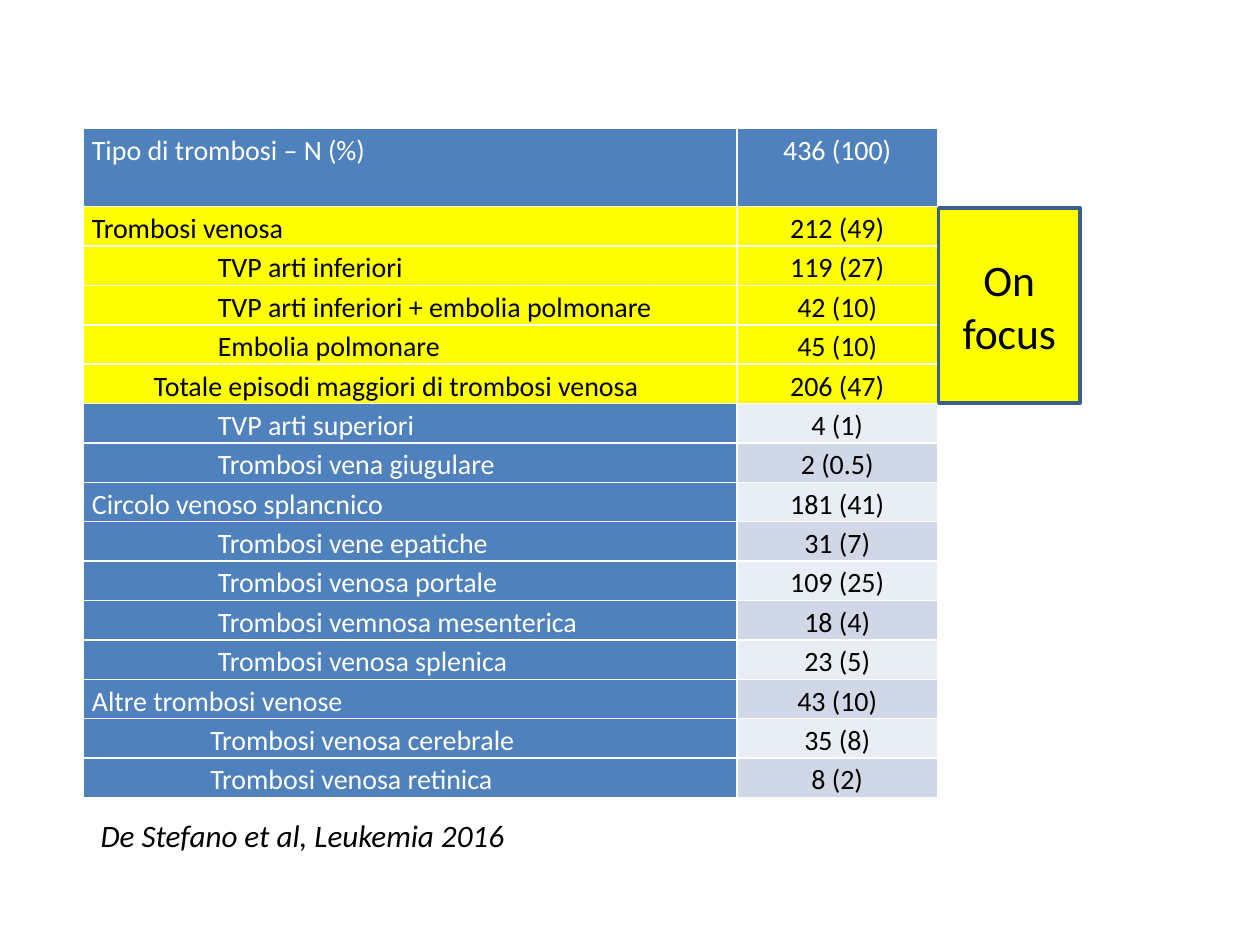
from pptx import Presentation
from pptx.dml.color import RGBColor
from pptx.enum import shapes, text
from pptx.util import Inches, Pt

# Content: label, value, indent level, in focus
ROWS = [
    ("Tipo di trombosi – N (%)", "436 (100)", 0, False),
    ("Trombosi venosa", "212 (49)", 0, True),
    ("TVP arti inferiori", "119 (27)", 3, True),
    ("TVP arti inferiori + embolia polmonare", "42 (10)", 3, True),
    ("Embolia polmonare", "45 (10)", 3, True),
    ("Totale episodi maggiori di trombosi venosa", "206 (47)", 1, True),
    ("TVP arti superiori", "4 (1)", 3, False),
    ("Trombosi vena giugulare", "2 (0.5)", 3, False),
    ("Circolo venoso splancnico", "181 (41)", 0, False),
    ("Trombosi vene epatiche", "31 (7)", 3, False),
    ("Trombosi venosa portale", "109 (25)", 3, False),
    ("Trombosi vemnosa mesenterica", "18 (4)", 3, False),
    ("Trombosi venosa splenica", "23 (5)", 3, False),
    ("Altre trombosi venose", "43 (10)", 0, False),
    ("Trombosi venosa cerebrale", "35 (8)", 2, False),
    ("Trombosi venosa retinica", "8 (2)", 2, False),
]
FOCUS = "On focus"
SOURCE = "De Stefano et al, Leukemia 2016"

THEME = {
    "font": "Calibri", "cell": 16, "focus": 24.9, "source": 17.8,
    "blue": "4F81BD", "yellow": "FFFF00", "edge": "3A5F8C",
    "bands": ("E9EDF4", "D0D8E8"), "white": "FFFFFF", "black": "000000",
}
INDENTS = (0, 0.49, 0.94, 1)
LEFT, TOP, COLS = 0.66, 1.02, (5.19, 1.59)
HEAD, ROW = 0.62, 0.31


def color(name):
    return RGBColor.from_string(THEME.get(name, name))


def style(para, size, ink, align=text.PP_ALIGN.LEFT):
    para.alignment = align
    font = para.font
    font.name, font.size, font.bold = THEME["font"], Pt(THEME[size]), False
    font.color.rgb = color(ink)


def fill_cell(cell, words, fill, ink, anchor, align, indent=0):
    cell.fill.solid()
    cell.fill.fore_color.rgb = color(fill)
    cell.margin_left = cell.margin_right = Inches(0.07)
    cell.margin_top = cell.margin_bottom = 0
    cell.vertical_anchor = anchor
    para = cell.text_frame.paragraphs[0]
    para.text = words
    para.line_spacing = 1.15
    if indent:
        para._p.get_or_add_pPr().set("marL", str(Inches(indent)))
    style(para, "cell", ink, align)


def add_rows(slide):
    high = HEAD + ROW * (len(ROWS) - 1)
    grid = slide.shapes.add_table(
        len(ROWS), len(COLS), Inches(LEFT), Inches(TOP),
        Inches(sum(COLS)), Inches(high)).table
    for col, wide in zip(grid.columns, COLS):
        col.width = Inches(wide)
    for i, (label, value, level, focus) in enumerate(ROWS):
        grid.rows[i].height = Inches(ROW if i else HEAD)
        fill = "yellow" if focus else "blue"
        ink = "black" if focus else "white"
        band, dark = (THEME["bands"][i % 2], "black") if i else (fill, ink)
        low, mid = text.MSO_ANCHOR.BOTTOM, text.MSO_ANCHOR.MIDDLE
        if i == 0:
            low = mid = text.MSO_ANCHOR.TOP
        fill_cell(grid.cell(i, 0), label, fill, ink, low,
                  text.PP_ALIGN.LEFT, INDENTS[level])
        fill_cell(grid.cell(i, 1), value, fill if focus else band, dark, mid,
                  text.PP_ALIGN.CENTER)


def add_focus(slide):
    count = sum(row[3] for row in ROWS)
    box = slide.shapes.add_shape(
        shapes.MSO_SHAPE.RECTANGLE, Inches(LEFT + sum(COLS) + 0.01),
        Inches(TOP + HEAD + 0.01), Inches(1.12), Inches(ROW * count))
    box.shadow.inherit = False
    box.fill.solid()
    box.fill.fore_color.rgb = color("yellow")
    box.line.color.rgb = color("edge")
    box.line.width = Pt(2)
    frame = box.text_frame
    frame.word_wrap = True
    frame.vertical_anchor = text.MSO_ANCHOR.MIDDLE
    frame.text = FOCUS
    style(frame.paragraphs[0], "focus", "black", text.PP_ALIGN.CENTER)


def add_source(slide):
    box = slide.shapes.add_textbox(
        Inches(0.7), Inches(6.43), Inches(3.44), Inches(0.4))
    frame = box.text_frame
    frame.word_wrap = False
    frame.text = SOURCE
    para = frame.paragraphs[0]
    style(para, "source", "black")
    para.font.italic = True


def main():
    deck = Presentation()
    deck.slide_width, deck.slide_height = Inches(10), Inches(7.5)
    slide = deck.slides.add_slide(deck.slide_layouts[6])
    add_rows(slide)
    add_focus(slide)
    add_source(slide)
    deck.save("out.pptx")


if __name__ == "__main__":
    main()
